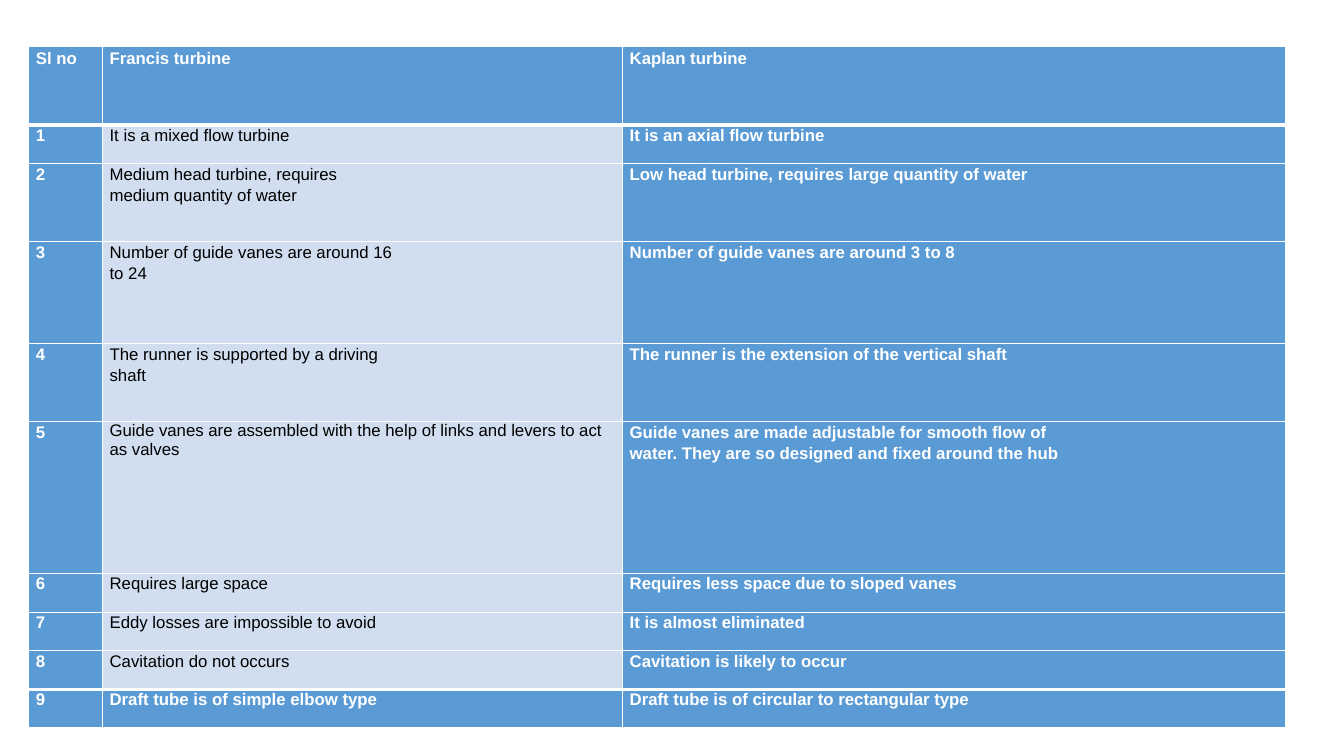
"""Build a slide with a table comparing Francis and Kaplan turbines."""
import pptx
import pptx.util
import pptx.dml.color
import pptx.oxml
import pptx.oxml.ns

Pt = pptx.util.Pt

SIZE = (960, 540)
LEFT, TOP = 20.4, 33.1
COLS = [52.7, 371.5, 473.8]
INDENT = 5.2
BLUE, PALE, WHITE, BLACK = "5B9BD5", "D0DEEF", "FFFFFF", "000000"
THIN, THICK = 1, 3
NEXT = 1.1
SPACING = {(5, 1): 1.0}
FONT = {"name": "Arial", "size": Pt(12)}
INSETS = {"margin_left": 0, "margin_top": 0, "margin_right": 0, "margin_bottom": 0}
PLAIN = {"first_row": False, "horz_banding": False}

ROWS = [
    (56.1, 1.15, "Sl no", "Francis turbine", "Kaplan turbine"),
    (27.5, 1.06, "1", "It is a mixed flow turbine", "It is an axial flow turbine"),
    (55.6, 1.12, "2", "Medium head turbine, requires\nmedium quantity of water",
     "Low head turbine, requires large quantity of water"),
    (73, 1.11, "3", "Number of guide vanes are around 16\nto 24",
     "Number of guide vanes are around 3 to 8"),
    (55.6, 1.12, "4", "The runner is supported by a driving\nshaft",
     "The runner is the extension of the vertical shaft"),
    (108.6, 1.11, "5",
     "Guide vanes are assembled with the help of links and levers to act as valves",
     "Guide vanes are made adjustable for smooth flow of\n"
     "water. They are so designed and fixed around the hub"),
    (27.8, 1.07, "6", "Requires large space", "Requires less space due to sloped vanes"),
    (27.5, 1.06, "7", "Eddy losses are impossible to avoid", "It is almost eliminated"),
    (27.8, 1.07, "8", "Cavitation do not occurs", "Cavitation is likely to occur"),
    (27.5, 1.06, "9", "Draft tube is of simple elbow type",
     "Draft tube is of circular to rectangular type"),
]
LAST = len(ROWS) - 1


def tint(text):
    return pptx.dml.color.RGBColor.from_string(text)


def apply(item, values):
    for key, value in values.items():
        setattr(item, key, value)


def edge(cell, side, width):
    cell._tc.get_or_add_tcPr().append(pptx.oxml.parse_xml(
        f'<a:ln{side} {pptx.oxml.ns.nsdecls("a")} w="{Pt(width)}">'
        f'<a:solidFill><a:srgbClr val="{WHITE}"/></a:solidFill></a:ln{side}>'))


def write(cell, text, gap, bold, color):
    cell.text = text
    for n, para in enumerate(cell.text_frame.paragraphs):
        para.line_spacing = NEXT if n else gap
        props = para._p.get_or_add_pPr()
        props.set("marL", str(Pt(INDENT)))
        props.set("indent", "0")
        for run in para.runs:
            apply(run.font, {**FONT, "bold": bold})
            run.font.color.rgb = tint(color)


def style(cell, row, fill):
    apply(cell, INSETS)
    upper = THICK if row in (1, LAST) else THIN
    lower = THICK if row in (0, LAST - 1) else THIN
    for side, width in zip("LRTB", (THIN, THIN, upper, lower)):
        edge(cell, side, width)
    cell.fill.solid()
    cell.fill.fore_color.rgb = tint(fill)


def main():
    deck = pptx.Presentation()
    deck.slide_width, deck.slide_height = map(Pt, SIZE)
    slide = deck.slides.add_slide(deck.slide_layouts[6])
    area = (LEFT, TOP, sum(COLS), sum(row[0] for row in ROWS))
    table = slide.shapes.add_table(len(ROWS), len(COLS), *map(Pt, area)).table
    apply(table, PLAIN)
    for col, width in zip(table.columns, COLS):
        col.width = Pt(width)
    for r, (height, gap, *texts) in enumerate(ROWS):
        table.rows[r].height = Pt(height)
        for c, text in enumerate(texts):
            cell = table.cell(r, c)
            light = c == 1 and 0 < r < LAST
            style(cell, r, PALE if light else BLUE)
            write(cell, text, SPACING.get((r, c), gap), not light,
                  BLACK if light else WHITE)
    deck.save("out.pptx")


if __name__ == "__main__":
    main()
